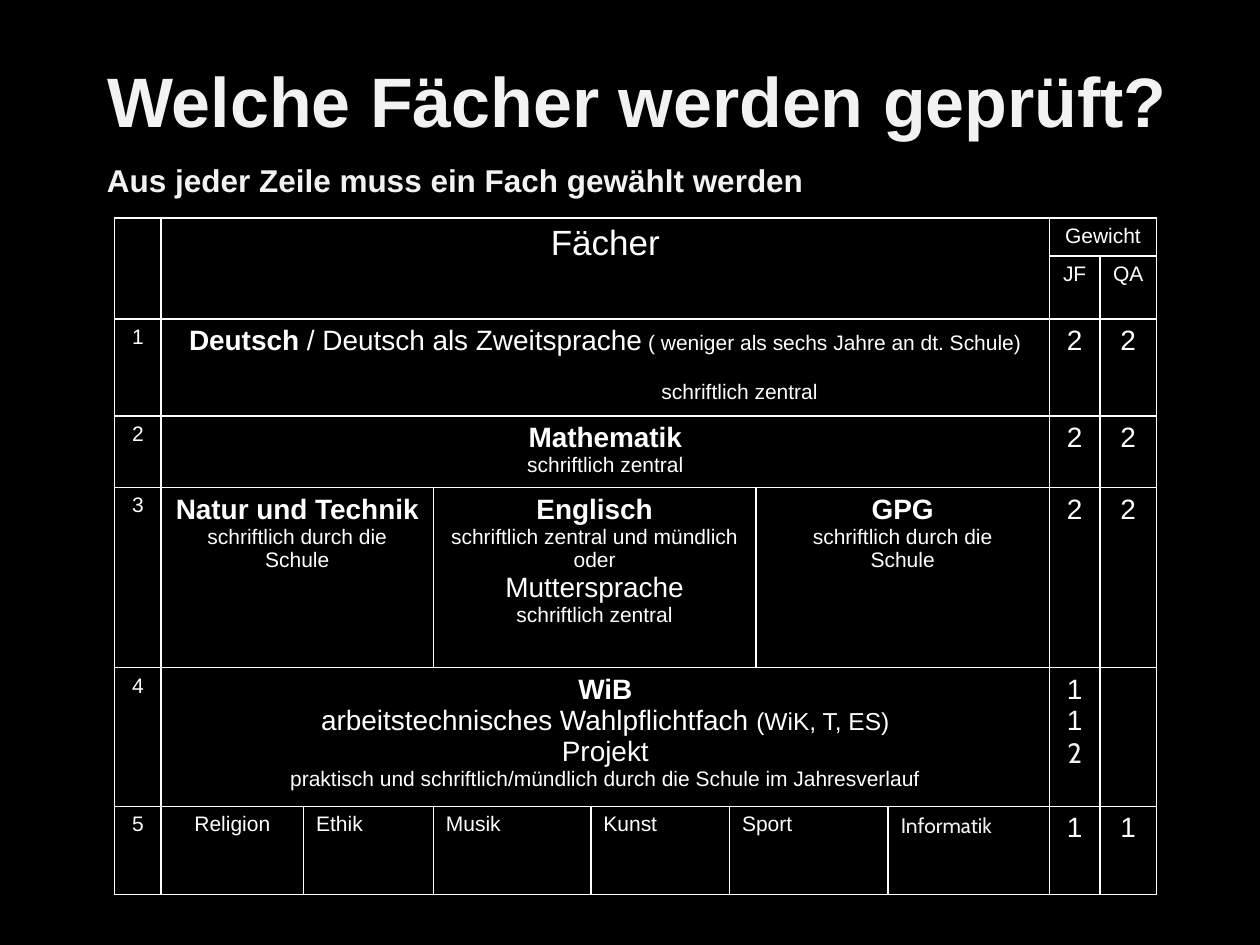
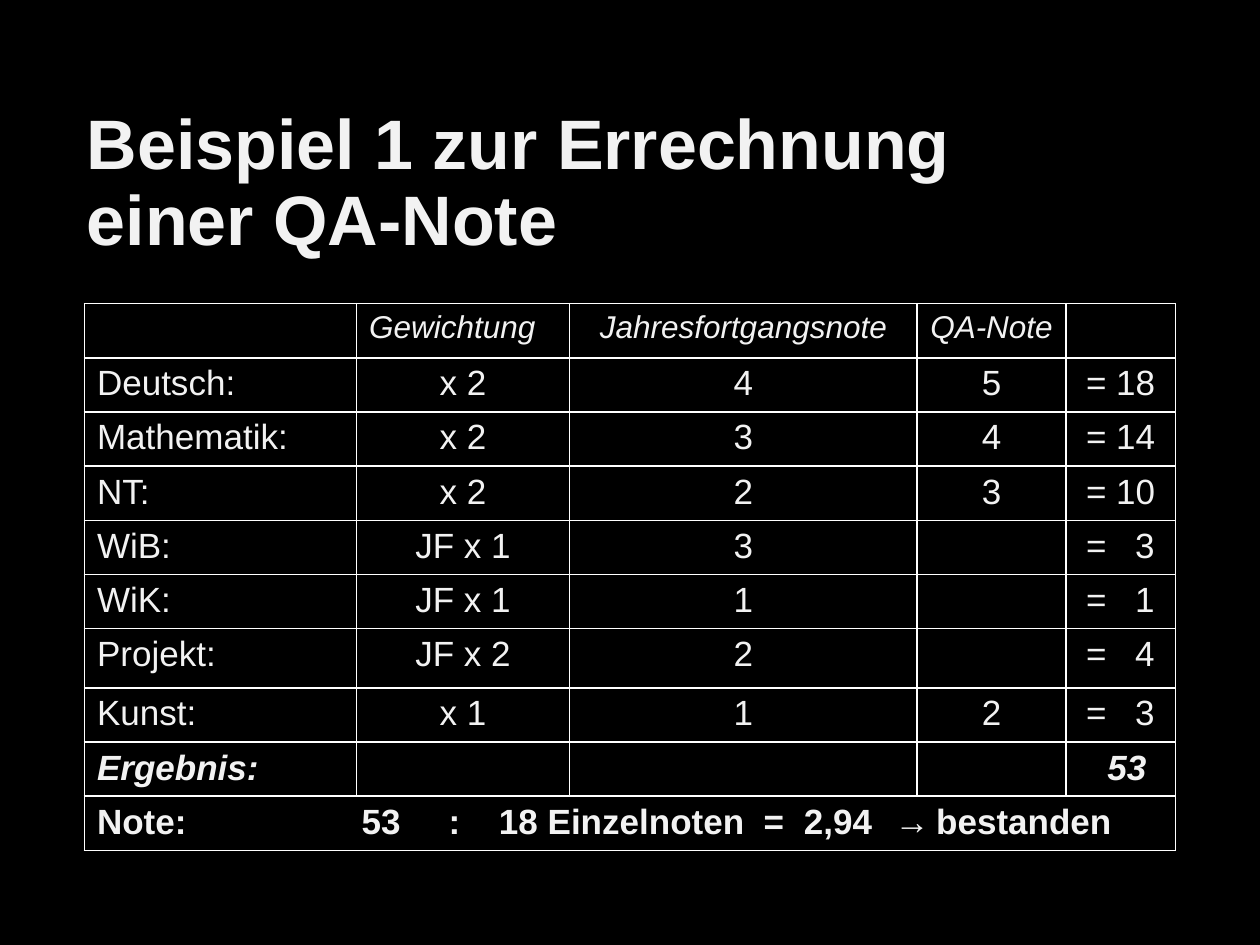
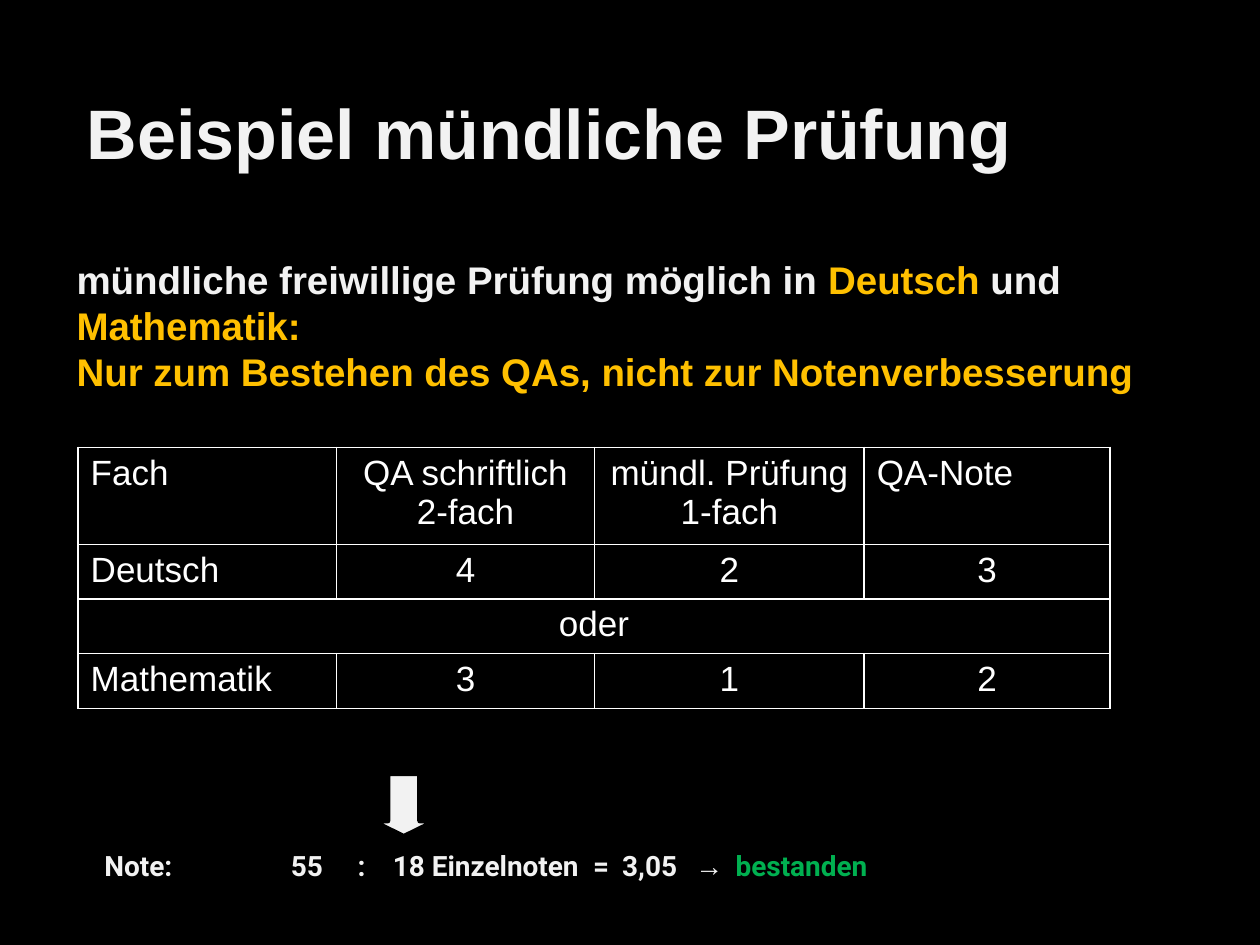
"""Build three slides on examination subjects and the calculation of a QA mark."""
from lxml import etree
from pptx import Presentation
from pptx import util as u
from pptx.dml.color import RGBColor
from pptx.enum import shapes, text
from pptx.oxml.ns import qn

COLORS = {"back": "000000", "white": "FFFFFF", "light": "F2F2F2",
          "gold": "FFC000", "green": "00B050"}
LEFT, CENTER = text.PP_ALIGN.LEFT, text.PP_ALIGN.CENTER
TOP, MIDDLE = text.MSO_ANCHOR.TOP, text.MSO_ANCHOR.MIDDLE


def rgb(name):
    """Return the named colour."""
    return RGBColor.from_string(COLORS[name])


def span(words, size=16, bold=False, italic=False, color="white", font="Arial"):
    """Describe a stretch of text in one style."""
    return {"words": words, "size": size, "bold": bold, "italic": italic,
            "color": color, "font": font}


def small(words):
    """Describe a stretch of small text."""
    return span(words, 12)


def strong(words):
    """Describe a stretch of bold subject text."""
    return span(words, bold=True)


def write(frame, lines, align=LEFT):
    """Fill a text frame with one paragraph for each list of spans."""
    for number, line in enumerate(lines):
        para = frame.add_paragraph() if number else frame.paragraphs[0]
        para.alignment = align
        for style in line:
            run = para.add_run()
            run.text = style["words"]
            run.font.size = u.Pt(style["size"])
            run.font.bold = style["bold"]
            run.font.italic = style["italic"]
            run.font.name = style["font"]
            run.font.color.rgb = rgb(style["color"])


def set_tabs(para, stops):
    """Give a paragraph left tab stops, in inches."""
    tabs = etree.SubElement(para._p.get_or_add_pPr(), qn("a:tabLst"))
    for stop in stops:
        etree.SubElement(tabs, qn("a:tab"), pos=str(u.Inches(stop)), algn="l")


def indent(para, inches):
    """Indent a whole paragraph from the left."""
    para._p.get_or_add_pPr().set("marL", str(u.Inches(inches)))


def place(place_in):
    """Convert left, top, width and height to lengths."""
    return [u.Inches(value) for value in place_in]


def add_page(deck, title, at, anchor=MIDDLE, spacing=0.9):
    """Add a slide with a formatted title."""
    page = deck.slides.add_slide(deck.slide_layouts[5])
    box = page.shapes.title
    box.left, box.top, box.width, box.height = place(at)
    frame = box.text_frame
    frame.auto_size = text.MSO_AUTO_SIZE.NONE
    frame.vertical_anchor = anchor
    write(frame, [[span(title, 40, True, color="light")]])
    frame.paragraphs[0].line_spacing = spacing
    return page


def add_text(page, at, lines, anchor=TOP):
    """Add a wrapping text box."""
    frame = page.shapes.add_textbox(*place(at)).text_frame
    frame.word_wrap = True
    frame.vertical_anchor = anchor
    write(frame, lines)
    return frame


def add_border(cell):
    """Draw a thin white line on all sides of a cell."""
    props = cell._tc.get_or_add_tcPr()
    for number, side in enumerate(("lnL", "lnR", "lnT", "lnB")):
        line = etree.Element(qn(f"a:{side}"), w=str(u.Pt(1)))
        fill = etree.SubElement(line, qn("a:solidFill"))
        etree.SubElement(fill, qn("a:srgbClr"), val=COLORS["white"])
        props.insert(number, line)


def add_grid(page, left, top, columns, rows):
    """Add an unfilled table with white borders."""
    frame = page.shapes.add_table(len(rows), len(columns), *place(
        (left, top, sum(columns), sum(rows))))
    grid = frame.table
    grid.first_row = grid.horz_banding = False
    for column, width in zip(grid.columns, columns):
        column.width = u.Inches(width)
    for row, height in zip(grid.rows, rows):
        row.height = u.Inches(height)
    for cell in grid.iter_cells():
        cell.fill.background()
        add_border(cell)
    return grid


def put(grid, row, column, lines, align=CENTER, rows=1, columns=1):
    """Write into a cell, merging it with its neighbours when it spans them."""
    cell = grid.cell(row, column)
    if rows > 1 or columns > 1:
        cell.merge(grid.cell(row + rows - 1, column + columns - 1))
    write(cell.text_frame, lines, align)
    return cell


def build_subjects(deck):
    """Build the slide with the table of examined subjects."""
    page = add_page(deck, "Welche Fächer werden geprüft?",
                    (0.75, 0.41, 8.82, 0.77), TOP, 1)
    add_text(page, (0.75, 1.23, 7.72, 0.4), [
        [span("Aus jeder Zeile muss ein Fach gewählt werden", 18, True, color="light")]])
    grid = add_grid(page, 0.91, 1.73,
                    [0.37, 1.13, 1.03, 1.25, 1.1, 0.21, 1.05, 1.28, 0.4, 0.45],
                    [0.3, 0.5, 0.77, 0.57, 1.43, 1.1, 0.7])
    put(grid, 0, 0, [], rows=2)
    put(grid, 0, 1, [[span("Fächer", 20)]], rows=2, columns=7)
    put(grid, 0, 8, [[small("Gewicht")]], columns=2)
    put(grid, 1, 8, [[small("JF")]])
    put(grid, 1, 9, [[small("QA")]])
    for number in range(1, 6):
        put(grid, number + 1, 0, [[small(str(number))]])
    for row, weight in ((2, "2"), (3, "2"), (4, "2"), (6, "1")):
        for column in (8, 9):
            put(grid, row, column, [[span(weight)]])

    german = put(grid, 2, 1, [
        [strong("Deutsch"), span(" / Deutsch als Zweitsprache"),
         small(" ( weniger als sechs Jahre an dt. Schule)")],
        [small("schriftlich zentral")]], columns=7)
    note = german.text_frame.paragraphs[1]
    note.alignment = LEFT
    note.space_before = u.Pt(14)
    indent(note, 3.87)

    put(grid, 3, 1, [[strong("Mathematik")], [small("schriftlich zentral")]], columns=7)
    put(grid, 4, 1, [[strong("Natur und Technik")],
                     [small("schriftlich durch die Schule")]], columns=2)
    put(grid, 4, 3, [[strong("Englisch")], [small("schriftlich zentral und mündlich")],
                     [small("oder")], [span("Muttersprache")],
                     [small("schriftlich zentral")]], columns=3)
    put(grid, 4, 6, [[strong("GPG")], [small("schriftlich durch die")],
                     [small("Schule")]], columns=2)
    put(grid, 5, 1, [
        [strong("WiB")],
        [span("arbeitstechnisches Wahlpflichtfach "), span("(WiK, T, ES)", 14)],
        [span("Projekt")],
        [small("praktisch und schriftlich/mündlich durch die Schule im Jahresverlauf")]],
        columns=7)
    put(grid, 5, 8, [[span("1")], [span("1")], [span("2", color="light", font="Cabin")]])
    put(grid, 6, 1, [[small("Religion")]])
    for column, subject in enumerate(("Ethik", "Musik", "Kunst"), 2):
        put(grid, 6, column, [[small(subject)]], LEFT)
    put(grid, 6, 5, [[small("Sport")]], LEFT, columns=2)
    put(grid, 6, 7, [[span("Informatik", 12, color="light", font="Cabin")]], LEFT)


def build_example(deck):
    """Build the slide that works out one QA mark."""
    page = add_page(deck, "Beispiel 1 zur Errechnung einer QA-Note",
                    (0.59, 0.84, 7.5, 1.25))
    heights = [0.43] * 10
    heights[6] = 0.47
    grid = add_grid(page, 0.67, 2.41, [2.16, 1.69, 2.76, 1.18, 0.87], heights)
    for column, heading in enumerate(("Gewichtung", "Jahresfortgangsnote", "QA-Note"), 1):
        put(grid, 0, column, [[span(heading, 18, italic=True, color="light")]],
            LEFT if column == 1 else CENTER)
    marks = [("Deutsch:", "x 2", "4", "5", "= 18"),
             ("Mathematik:", "x 2", "3", "4", "= 14"),
             ("NT:", "x 2", "2", "3", "= 10"),
             ("WiB:", "JF x 1", "3", "", "=\t3"),
             ("WiK:", "JF x 1", "1", "", "=\t1"),
             ("Projekt:", "JF x 2", "2", "", "=\t4"),
             ("Kunst:", "x 1", "1", "2", "=\t3")]
    for row, values in enumerate(marks, 1):
        for column, value in enumerate(values):
            if not value:
                continue
            tabbed = "\t" in value
            cell = put(grid, row, column, [[span(value, 20, color="light")]],
                       LEFT if column == 0 or tabbed else CENTER)
            if tabbed:
                cell.margin_left = u.Inches(0.16)
                set_tabs(cell.text_frame.paragraphs[0], [0.39])
    for column, value in ((0, "Ergebnis:"), (4, "53")):
        total = put(grid, 8, column, [[span(value, 20, True, True, "light")]], LEFT)
    indent(total.text_frame.paragraphs[0], 0.23)
    result = put(grid, 9, 0, [[span(
        "Note:\t53\t:\t18 Einzelnoten\t=\t2,94\t→\tbestanden", 20, True, color="light")]],
        LEFT, columns=5)
    set_tabs(result.text_frame.paragraphs[0], [2.1, 2.79, 3.19, 5.29, 5.61, 6.33, 6.66])


def build_oral(deck):
    """Build the slide on the voluntary oral examination."""
    page = add_page(deck, "Beispiel mündliche Prüfung", (0.59, 0.46, 8.58, 1.25))
    add_text(page, (0.51, 1.98, 8.74, 1.62), [
        [span("mündliche freiwillige Prüfung möglich in ", 22, True, color="light"),
         span("Deutsch ", 22, True, color="gold"),
         span("und ", 22, True, color="light"),
         span("Mathematik:", 22, True, color="gold")],
        [span("Nur zum Bestehen des QAs, nicht zur Notenverbesserung", 22, True,
              color="gold")]])
    grid = add_grid(page, 0.62, 3.55, [2.05, 2.05, 2.14, 1.95], [0.77] + [0.43] * 3)
    rows = {0: (["Fach"], ["QA schriftlich", "2-fach"],
                ["mündl. Prüfung", "1-fach"], ["QA-Note"]),
            1: (["Deutsch"], ["4"], ["2"], ["3"]),
            3: (["Mathematik"], ["3"], ["1"], ["2"])}
    for row, cells in rows.items():
        for column, lines in enumerate(cells):
            left = column == 0 or lines == ["QA-Note"]
            put(grid, row, column, [[span(line, 20)] for line in lines],
                LEFT if left else CENTER)
    put(grid, 2, 0, [[span("oder", 20)]], columns=4)

    result = add_text(page, (0.73, 6.68, 7.15, 0.37), [
        [span("Note:\t55\t:\t18 Einzelnoten\t=\t3,05\t", 16, True, color="light",
              font="Roboto"),
         span("→\t", 16, True, color="light"),
         span("bestanden", 16, True, color="green", font="Roboto")]], MIDDLE)
    set_tabs(result.paragraphs[0], [1.48, 2.01, 2.29, 3.88, 4.11, 4.69, 5.01])

    arrow = page.shapes.add_shape(shapes.MSO_SHAPE.DOWN_ARROW,
                                  *place((2.95, 6.14, 0.51, 0.5)))
    arrow.adjustments[0], arrow.adjustments[1] = 0.5, 0.25
    arrow.shadow.inherit = False
    arrow.fill.solid()
    arrow.fill.fore_color.rgb = rgb("light")
    arrow.line.color.rgb = rgb("back")
    arrow.line.width = u.Pt(3)


def main():
    """Build and save the deck."""
    deck = Presentation()
    deck.slide_width, deck.slide_height = u.Inches(10), u.Inches(7.5)
    back = deck.slide_master.background.fill
    back.solid()
    back.fore_color.rgb = rgb("back")
    build_subjects(deck)
    build_example(deck)
    build_oral(deck)
    deck.save("out.pptx")


if __name__ == "__main__":
    main()
